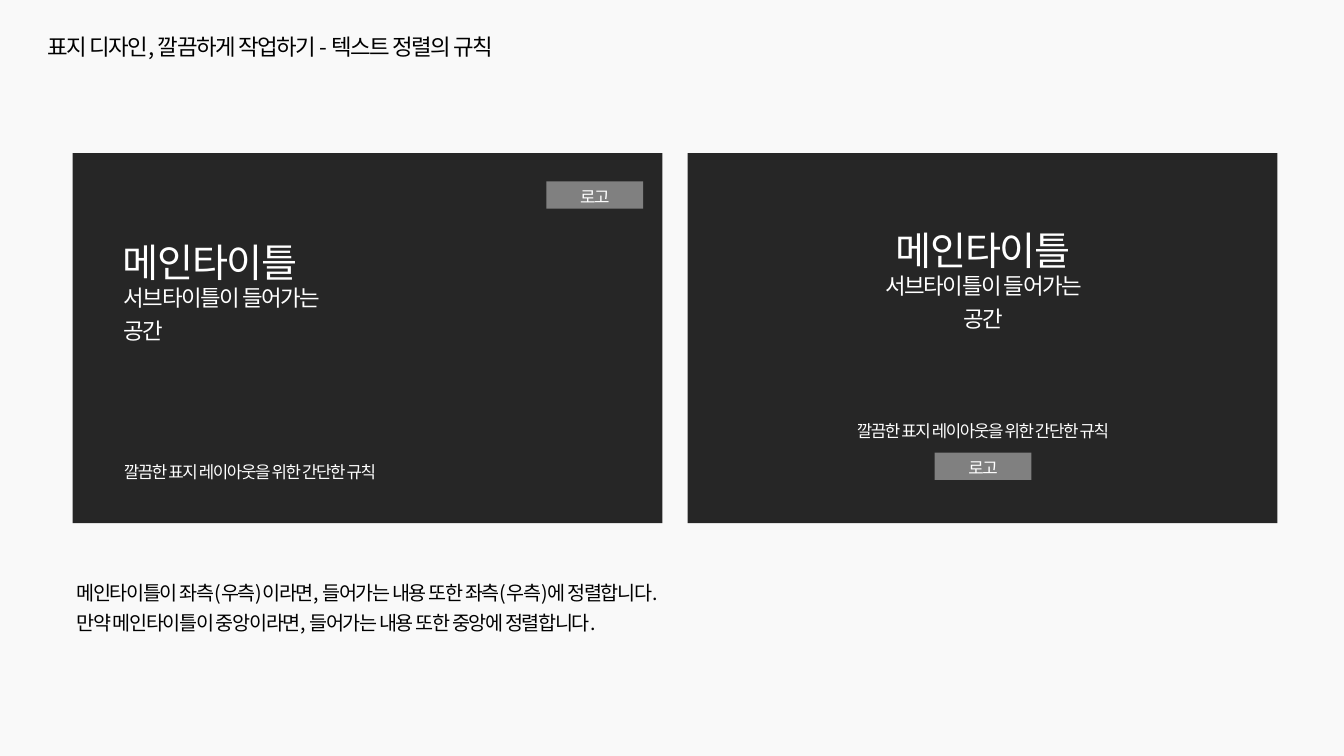
from dataclasses import dataclass

from pptx import Presentation
from pptx.dml.color import RGBColor
from pptx.enum.shapes import MSO_SHAPE
from pptx.enum.text import MSO_AUTO_SIZE, PP_ALIGN
from pptx.oxml import parse_xml
from pptx.oxml.ns import nsdecls
from pptx.util import Inches, Pt

FONT = "Noto Sans CJK KR"
COLORS = {
    "background": "F9F9F9",
    "cover": "262626",
    "logo": "808080",
    "dark": "000000",
    "light": "FFFFFF",
}
COVER_TOP, COVER_WIDTH, COVER_HEIGHT = 1.52, 5.85, 3.67
LOGO_WIDTH, LOGO_HEIGHT = 0.96, 0.27
LABEL_WIDTH = 0.58


@dataclass
class Line:
    text: str
    left: float
    top: float
    width: float
    height: float
    size: int


@dataclass
class Cover:
    left: float
    align: PP_ALIGN
    lines: list[Line]
    logo_left: float
    logo_top: float


def cover_lines(lefts: list[float], tops: list[float]) -> list[Line]:
    """Place the main title, subtitle and caption of one cover."""
    texts = [
        ("메인타이틀", 2.52, 0.6, 28),
        ("서브타이틀이 들어가는 공간", 2.52, 0.38, 16),
        ("깔끔한 표지 레이아웃을 위한 간단한 규칙", 3.14, 0.32, 12),
    ]
    return [
        Line(text, left, top, width, height, size)
        for (text, width, height, size), left, top in zip(texts, lefts, tops)
    ]


COVERS = [
    Cover(0.72, PP_ALIGN.LEFT,
          cover_lines([1.12, 1.13, 1.13], [2.22, 2.72, 4.49]), 5.42, 1.8),
    Cover(6.82, PP_ALIGN.CENTER,
          cover_lines([8.49, 8.49, 8.18], [2.1, 2.6, 4.08]), 9.27, 4.49),
]
HEADING = Line("표지 디자인, 깔끔하게 작업하기 - 텍스트 정렬의 규칙",
               0.37, 0.28, 6.42, 0.37, 16)
EXPLANATION = Line(
    "메인타이틀이 좌측(우측)이라면, 들어가는 내용 또한 좌측(우측)에 정렬합니다.\n"
    "만약 메인타이틀이 중앙이라면, 들어가는 내용 또한 중앙에 정렬합니다.",
    0.66, 5.64, 8.14, 0.71, 14)


def add_text(shapes, line: Line, *, color: str = "light",
             align: PP_ALIGN = PP_ALIGN.LEFT, spacing: float = 1.2) -> None:
    box = shapes.add_textbox(Inches(line.left), Inches(line.top),
                             Inches(line.width), Inches(line.height))
    frame = box.text_frame
    frame.word_wrap = True
    frame.auto_size = MSO_AUTO_SIZE.SHAPE_TO_FIT_TEXT
    frame.text = line.text
    for para in frame.paragraphs:
        para.alignment = align
        para.line_spacing = spacing
        for span in para.runs:
            span.font.size = Pt(line.size)
            span.font.name = FONT
            span.font.color.rgb = RGBColor.from_string(COLORS[color])
            properties = span.font._element
            properties.set("spc", "-100")
            properties.append(parse_xml(f'<a:ea {nsdecls("a")} typeface="{FONT}"/>'))


def add_block(shapes, left: float, top: float, width: float, height: float,
              color: str) -> None:
    block = shapes.add_shape(MSO_SHAPE.RECTANGLE, Inches(left), Inches(top),
                             Inches(width), Inches(height))
    block.shadow.inherit = False
    block.fill.solid()
    block.fill.fore_color.rgb = RGBColor.from_string(COLORS[color])
    block.line.fill.background()


def add_cover(page, cover: Cover) -> None:
    shapes = page.shapes.add_group_shape().shapes
    add_block(shapes, cover.left, COVER_TOP, COVER_WIDTH, COVER_HEIGHT, "cover")
    for line in cover.lines:
        add_text(shapes, line, align=cover.align)
    add_block(shapes, cover.logo_left, cover.logo_top, LOGO_WIDTH, LOGO_HEIGHT, "logo")
    label_left = cover.logo_left + (LOGO_WIDTH - LABEL_WIDTH) / 2
    label = Line("로고", label_left, cover.logo_top - 0.04, LABEL_WIDTH, 0.33, 12)
    add_text(shapes, label, align=PP_ALIGN.CENTER)


def main() -> None:
    deck = Presentation()
    deck.slide_width, deck.slide_height = Inches(13.33), Inches(7.5)
    page = deck.slides.add_slide(deck.slide_layouts[6])
    page.background.fill.solid()
    page.background.fill.fore_color.rgb = RGBColor.from_string(COLORS["background"])
    add_text(page.shapes, HEADING, color="dark", spacing=1.0)
    for cover in COVERS:
        add_cover(page, cover)
    add_text(page.shapes, EXPLANATION, color="dark", spacing=1.3)
    deck.save("out.pptx")


if __name__ == "__main__":
    main()
